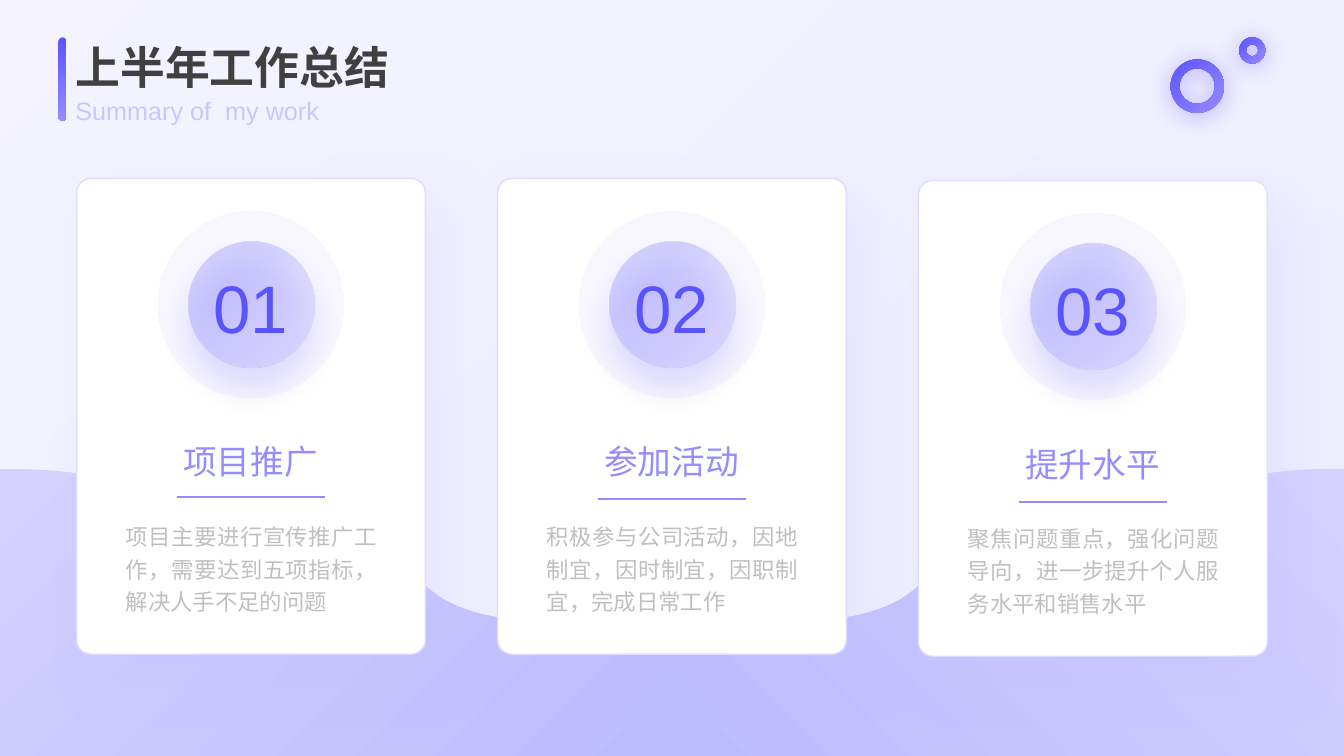
from lxml import etree
from pptx import Presentation
from pptx.dml.color import RGBColor
from pptx.enum import shapes as kinds, text as txt
from pptx.oxml import parse_xml
from pptx.oxml.ns import nsdecls, qn
from pptx.util import Inches, Pt

INDIGO = RGBColor(0x5A, 0x54, 0xFF)
VIOLET = RGBColor(0x97, 0x8C, 0xFF)
LILAC = RGBColor(0xC1, 0xBA, 0xFF)
PALE_LILAC = RGBColor(0xCB, 0xC5, 0xFF)
PERIWINKLE = RGBColor(0x9C, 0x98, 0xFF)
CARD_EDGE = RGBColor(0xDE, 0xDD, 0xFF)
WAVE_LIGHT = RGBColor(0xD5, 0xD1, 0xFF)
WAVE_DARK = RGBColor(0xBD, 0xBB, 0xFF)
WHITE = RGBColor(0xFF, 0xFF, 0xFF)
DARK_GREY = RGBColor(0x40, 0x40, 0x40)
GREY = RGBColor(0xBF, 0xBF, 0xBF)
ACCENT = [(0, INDIGO, 100), (100, VIOLET, 100)]

prs = Presentation()
prs.slide_width, prs.slide_height = Inches(13.33), Inches(7.5)
slide = prs.slides.add_slide(prs.slide_layouts[6])
items = slide.shapes


def paint(shape, stops, angle=None, focus=None, shadow=None):
    """Gradient of (position, colour, opacity) stops, linear or from a focus
    (left, top, right, bottom); shadow is (colour, opacity, blur, distance, angle)."""
    shape.line.fill.background()
    shape.shadow.inherit = False
    if stops:
        marks = "".join(
            f'<a:gs pos="{pos * 1000}"><a:srgbClr val="{color}">'
            f'<a:alpha val="{opacity * 1000}"/></a:srgbClr></a:gs>'
            for pos, color, opacity in stops)
        if focus:
            left, top, right, bottom = (side * 1000 for side in focus)
            course = (f'<a:path path="circle"><a:fillToRect l="{left}" t="{top}" '
                      f'r="{right}" b="{bottom}"/></a:path>')
        else:
            course = f'<a:lin ang="{angle * 60000}" scaled="0"/>'
        shape.fill.background()
        blank = shape._element.spPr.find(qn("a:noFill"))
        blank.getparent().replace(blank, parse_xml(
            f'<a:gradFill {nsdecls("a")} rotWithShape="1"><a:gsLst>{marks}</a:gsLst>'
            f'{course}</a:gradFill>'))
    if shadow:
        color, opacity, blur, distance, direction = shadow
        shape._element.spPr.find(qn("a:effectLst")).append(parse_xml(
            f'<a:outerShdw {nsdecls("a")} blurRad="{Pt(blur)}" dist="{Pt(distance)}" '
            f'dir="{direction * 60000}" algn="ctr" rotWithShape="0"><a:srgbClr val="{color}">'
            f'<a:alpha val="{opacity * 1000}"/></a:srgbClr></a:outerShdw>'))


def write(words, left, top, width, height, size, color, align=txt.PP_ALIGN.LEFT,
          spacing=1.0, bold=False, anchor=txt.MSO_ANCHOR.TOP):
    frame = items.add_textbox(Inches(left), Inches(top), Inches(width), Inches(height)).text_frame
    frame.word_wrap = True
    frame.vertical_anchor = anchor
    line = frame.paragraphs[0]
    line.text = words
    line.alignment = align
    line.line_spacing = spacing
    line.font.name, line.font.size, line.font.bold = "Arial", Pt(size), bold
    line.font.color.rgb = color


# Background tint
backdrop = items.add_shape(kinds.MSO_SHAPE.RECTANGLE, 0, 0, prs.slide_width, prs.slide_height)
paint(backdrop, [(0, INDIGO, 10), (100, VIOLET, 10)], focus=(100, 100, 0, 0))

# Accent bar beside the title
bar = items.add_shape(kinds.MSO_SHAPE.ROUNDED_RECTANGLE,
                      Inches(0.58), Inches(0.37), Inches(0.08), Inches(0.83))
bar.adjustments[0] = 0.5
paint(bar, ACCENT, angle=90)

# Rings at the top right
for left, top, size, thickness in [(11.61, 0.59, 0.53, 0.167), (12.29, 0.37, 0.26, 0.27)]:
    ring = items.add_shape(kinds.MSO_SHAPE.DONUT,
                           Inches(left), Inches(top), Inches(size), Inches(size))
    ring.adjustments[0] = thickness
    paint(ring, ACCENT, angle=45, shadow=(VIOLET, 74, 16, 2, 90))

# Waves: three straight sides, then Bezier curves, mirrored on the right
sides = [(-0.01, 4.65), (-0.01, 7.54), (6.67, 7.54), (6.67, 6.4), (6.65, 6.39)]
curves = [
    (6.53, 6.33), (6.4, 6.28), (6.25, 6.24),
    (5.68, 6.08), (5.17, 6.24), (4.63, 6.05),
    (4.08, 5.87), (4.07, 5.47), (3.51, 5.32),
    (2.95, 5.17), (2.33, 5.41), (1.82, 5.29),
    (1.31, 5.17), (1.46, 4.85), (0.95, 4.73),
    (0.69, 4.67), (0.34, 4.65), (0.01, 4.65),
]
for mirrored, angle in [(False, 45), (True, 135)]:
    outline = [(Inches(13.33 - x if mirrored else x), Inches(y)) for x, y in sides + curves]
    builder = items.build_freeform(*outline[0])
    builder.add_line_segments(outline[1:], close=True)
    wave = builder.convert_to_shape()
    segments = list(wave._element.iter(qn("a:lnTo")))[len(sides) - 1:][:len(curves)]
    for first in range(0, len(curves), 3):
        bend = etree.Element(qn("a:cubicBezTo"))
        segments[first].addprevious(bend)
        for segment in segments[first:first + 3]:
            bend.append(segment[0])
            segment.getparent().remove(segment)
    paint(wave, [(0, WAVE_LIGHT, 100), (100, WAVE_DARK, 100)], angle=angle)

# Title and subtitle
write("上半年工作总结", 0.65, 0.41, 3.77, 0.56, 32, DARK_GREY, spacing=0.9, bold=True,
      anchor=txt.MSO_ANCHOR.MIDDLE)
write("Summary of  my work", 0.65, 0.96, 3.84, 0.31, 18, PALE_LILAC, spacing=0.9,
      anchor=txt.MSO_ANCHOR.MIDDLE)

# Cards: number, heading, detail, top, height of the rule under the heading
cards = [
    ("01", "项目推广", "项目主要进行宣传推广工作，需要达到五项指标，解决人手不足的问题", 1.77, 4.93),
    ("02", "参加活动", "积极参与公司活动，因地制宜，因时制宜，因职制宜，完成日常工作", 1.77, 4.95),
    ("03", "提升水平", "聚焦问题重点，强化问题导向，进一步提升个人服务水平和销售水平", 1.79, 4.98),
]
for index, (number, heading, detail, top, rule_y) in enumerate(cards):
    left = 0.76 + 8.35 * index / 2
    card = items.add_shape(kinds.MSO_SHAPE.ROUNDED_RECTANGLE,
                           Inches(left), Inches(top), Inches(3.46), Inches(4.72))
    card.adjustments[0] = 0.041
    paint(card, None, shadow=(WAVE_DARK, 20, 39, 24, 45))
    card.fill.solid()
    card.fill.fore_color.rgb = WHITE
    card.line.color.rgb = CARD_EDGE
    card.line.width = Pt(1)

    halo = items.add_shape(kinds.MSO_SHAPE.OVAL, Inches(left + 0.81), Inches(top + 0.33),
                           Inches(1.84), Inches(1.84))
    halo.rotation = 329
    paint(halo, [(53, CARD_EDGE, 22), (100, INDIGO, 10)], focus=(50, 50, 50, 50))
    disc = items.add_shape(kinds.MSO_SHAPE.OVAL, Inches(left + 1.11), Inches(top + 0.63),
                           Inches(1.25), Inches(1.25))
    paint(disc, [(30, PERIWINKLE, 40), (76, LILAC, 37)], focus=(0, 0, 100, 100),
          shadow=(INDIGO, 43, 22, 15, 90))

    write(number, left + 1.12, top + 0.82, 1.21, 0.64, 48, INDIGO, txt.PP_ALIGN.CENTER)
    write(detail, left + 0.39, top + 3.32, 2.69, 0.91, 16, GREY, txt.PP_ALIGN.JUSTIFY, 1.2)
    write(heading, left + 0.38, top + 2.56, 2.69, 0.37, 24, VIOLET, txt.PP_ALIGN.CENTER)

    rule = items.add_connector(kinds.MSO_CONNECTOR.STRAIGHT, Inches(left + 2.46), Inches(rule_y),
                               Inches(left + 1), Inches(rule_y))
    rule.line.color.rgb = VIOLET
    rule.line.width = Pt(1.75)
    etree.SubElement(rule._element.spPr, qn("a:effectLst"))

prs.save("out.pptx")
